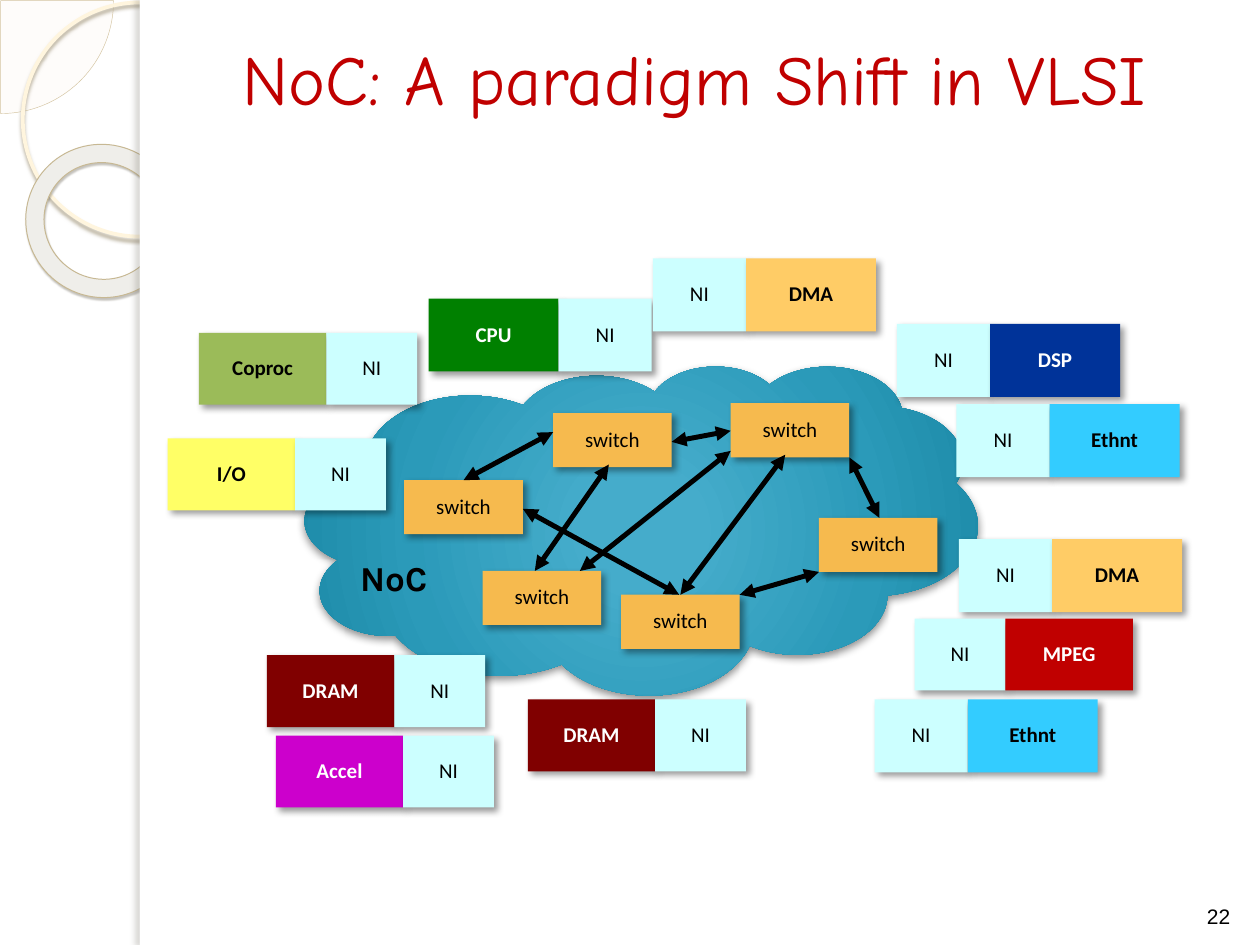
"""Build the slide on networks on chip: modules around a cloud of linked switches."""
from lxml import etree
from pptx import Presentation
from pptx.dml.color import RGBColor
from pptx.enum.shapes import MSO_CONNECTOR, MSO_SHAPE
from pptx.enum.text import MSO_ANCHOR, PP_ALIGN
from pptx.oxml.ns import qn
from pptx.util import Cm, Pt

PIE, OVAL, DONUT = MSO_SHAPE.PIE, MSO_SHAPE.OVAL, MSO_SHAPE.DONUT
BLOCK, CLOUD = MSO_SHAPE.RECTANGLE, MSO_SHAPE.CLOUD
STRAIGHT = MSO_CONNECTOR.STRAIGHT
MIDDLE, BOTTOM = MSO_ANCHOR.MIDDLE, MSO_ANCHOR.BOTTOM
CENTER = PP_ALIGN.CENTER

THEME = {
    "white": "FFFFFF", "black": "000000", "title": "C00000",
    "interface": "CCFFFF", "switch": "F6BA4E",
    "cloud": [(0, "45ACCC"), (15, "45ACCB"), (62, "2B9AB9"), (97, "1C8AA7"), (100, "0E89A7")],
    "title font": "Comic Neue", "label font": "Calibri",
    "cloud font": "Karla", "number font": "Arial",
    "title size": 40, "cloud size": 20, "label size": 12,
    "link width": 2.83,
    "block shadow": ("000000", 40, 4, 3, 45),
    "cloud shadow": ("000000", 43, 5, 2, 90),
}

TITLE = "NoC: A paradigm Shift in VLSI"
TITLE_BOX = (3.18, 0.03, 21.64, 3.05)
CLOUD_BOX = (6.15, 7.37, 13.56, 6.63)
CLOUD_LABEL, CLOUD_LABEL_BOX = "NoC", (7.01, 11.1, 2.72, 1.47)
NUMBER, NUMBER_BOX = "22", (23.93, 17.53, 1.27, 1.32)

DECORATIONS = [
    {"kind": PIE, "box": (-2.26, -2.26, 4.55, 4.55), "fill": "FEFCFA",
     "line": ("D3C39F", 0.25), "adjust": (0, 54.02)},
    {"kind": OVAL, "box": (0.46, 0.05, 4.72, 4.72), "line": ("FFF5DE", 2.15),
     "shadow": ("B0A68F", 85, 2, 2, 90)},
    {"kind": DONUT, "box": (0.51, 2.92, 3.12, 3.07), "fill": "EFEEEA",
     "line": ("C7B893", 0.58), "adjust": (0.12,), "rotation": 38.6,
     "shadow": ("5A5444", 35, 1, 1.2, 75)},
    {"kind": BLOCK, "box": (2.82, 0, 22.58, 19.05), "fill": THEME["white"]},
    {"kind": BLOCK, "box": (2.82, 0, 0.2, 19.05), "fill": THEME["white"],
     "shadow": ("736F63", 25, 3, 3, 180)},
    {"kind": BLOCK, "box": (2.82, 0, 0.5, 19.05), "fill": THEME["white"]},
]

SIZES = {"large": (2.62, 1.88, 1.47), "small": (2.57, 1.83, 1.45)}
MODULES = [
    ("Coproc", 4.01, 6.71, "small", "core first", "9BBB59", "black"),
    ("CPU", 8.64, 6.02, "large", "core first", "008000", "white"),
    ("DMA", 13.16, 5.21, "large", "core last", "FFCC66", "black"),
    ("DSP", 18.08, 6.53, "large", "core last", "003399", "white"),
    ("Ethnt", 19.28, 8.15, "large", "core last", "33CCFF", "black"),
    ("I/O", 3.38, 8.84, "small", "core first", "FFFF66", "black"),
    ("DMA", 19.33, 10.87, "large", "core last", "FFCC66", "black"),
    ("MPEG", 18.44, 12.47, "small", "core last", "C00000", "white"),
    ("Ethnt", 17.63, 14.1, "large", "core last", "33CCFF", "black"),
    ("DRAM", 5.38, 13.21, "small", "core first", "800000", "white"),
    ("DRAM", 10.64, 14.1, "small", "core first", "800000", "white"),
    ("Accel", 5.56, 14.83, "small", "core first", "CC00CC", "white"),
]

SWITCH_SIZE = (2.39, 1.09)
SWITCHES = {
    "north": (11.15, 8.33), "northeast": (14.73, 8.13), "east": (16.51, 10.44),
    "south": (12.52, 11.99), "west": (8.15, 9.68), "southwest": (9.73, 11.51),
}
LINKS = [
    ("west", (1, 0.53), "south", (0.49, 0)),
    ("south", (1, 0), "east", (0, 1)),
    ("southwest", (0.82, 0), "northeast", (0, 0.88)),
    ("northeast", (1, 1), "east", (0.51, 0)),
    ("south", (0.5, 0), "northeast", (0.46, 0.95)),
    ("west", (0.5, 0), "north", (0, 0.35)),
    ("southwest", (0.44, 0), "north", (0.47, 0.95)),
    ("north", (1, 0.53), "northeast", (0, 0.51)),
]


def lengths(values):
    return [Cm(value) for value in values]


def add_child(parent, tag, **attributes):
    child = etree.SubElement(parent, qn(tag))
    for name, value in attributes.items():
        child.set(name, str(value))
    return child


def add_shadow(shape, color, opacity, blur, distance, angle):
    effects = shape.element.spPr.find(qn("a:effectLst"))
    shadow = add_child(effects, "a:outerShdw", blurRad=Pt(blur), dist=Pt(distance),
                       dir=angle * 60000, algn="ctr", rotWithShape=0)
    add_child(add_child(shadow, "a:srgbClr", val=color), "a:alpha", val=opacity * 1000)


def add_figure(slide, kind, box, fill=None, line=None, shadow=None, adjust=(), rotation=0):
    shape = slide.shapes.add_shape(kind, *lengths(box))
    shape.rotation = rotation
    for index, value in enumerate(adjust):
        shape.adjustments[index] = value
    if fill:
        shape.fill.solid()
        shape.fill.fore_color.rgb = RGBColor.from_string(fill)
    else:
        shape.fill.background()
    if line:
        shape.line.color.rgb = RGBColor.from_string(line[0])
        shape.line.width = Pt(line[1])
    else:
        shape.line.fill.background()
    shape.shadow.inherit = False
    if shadow:
        add_shadow(shape, *shadow)
    return shape


def write(shape, text, role, color, bold=False, align=CENTER, anchor=MIDDLE, spacing=None):
    frame = shape.text_frame
    frame.vertical_anchor = anchor
    paragraph = frame.paragraphs[0]
    paragraph.alignment = align
    paragraph.line_spacing = spacing
    run = paragraph.add_run()
    run.text = text
    run.font.name = THEME[role + " font"]
    run.font.size = Pt(THEME.get(role + " size", THEME["label size"]))
    run.font.bold = bold
    run.font.color.rgb = RGBColor.from_string(THEME[color])


def add_block(slide, box, text, fill, color="black", bold=False):
    shape = add_figure(slide, BLOCK, box, fill, shadow=THEME["block shadow"])
    write(shape, text, "label", color, bold, spacing=0.93)


def add_cloud(slide):
    shape = add_figure(slide, CLOUD, CLOUD_BOX, shadow=THEME["cloud shadow"])
    properties = shape.element.spPr
    gradient = etree.Element(qn("a:gradFill"))
    stops = add_child(gradient, "a:gsLst")
    for position, color in THEME["cloud"]:
        add_child(add_child(stops, "a:gs", pos=position * 1000), "a:srgbClr", val=color)
    center = add_child(gradient, "a:path", path="circle")
    add_child(center, "a:fillToRect", l=50000, t=50000, r=50000, b=50000)
    properties.replace(properties.find(qn("a:noFill")), gradient)


def add_module(slide, name, left, top, size, order, fill, color):
    core_width, interface_width, height = SIZES[size]
    core = (core_width, name, fill, color, True)
    interface = (interface_width, "NI", THEME["interface"])
    for width, *details in (core, interface) if order == "core first" else (interface, core):
        add_block(slide, (left, top, width, height), *details)
        left += width


def switch_point(name, fractions):
    return [start + size * part
            for start, size, part in zip(SWITCHES[name], SWITCH_SIZE, fractions)]


def add_link(slide, start, start_part, end, end_part):
    points = switch_point(start, start_part) + switch_point(end, end_part)
    link = slide.shapes.add_connector(STRAIGHT, *lengths(points))
    link.line.color.rgb = RGBColor.from_string(THEME["black"])
    link.line.width = Pt(THEME["link width"])
    outline = link.element.spPr.find(qn("a:ln"))
    for tag in ("a:headEnd", "a:tailEnd"):
        add_child(outline, tag, type="triangle")
    add_child(link.element.spPr, "a:effectLst")


def main():
    presentation = Presentation()
    presentation.slide_width, presentation.slide_height = Cm(25.4), Cm(19.05)
    slide = presentation.slides.add_slide(presentation.slide_layouts[5])
    for decoration in DECORATIONS:
        add_figure(slide, **decoration)
    add_cloud(slide)
    for module in MODULES:
        add_module(slide, *module)
    for position in SWITCHES.values():
        add_block(slide, position + SWITCH_SIZE, "switch", THEME["switch"])
    for link in LINKS:
        add_link(slide, *link)
    label = slide.shapes.add_textbox(*lengths(CLOUD_LABEL_BOX))
    write(label, CLOUD_LABEL, "cloud", "black", True, None, None)
    number = slide.shapes.add_textbox(*lengths(NUMBER_BOX))
    number.text_frame.word_wrap = True
    write(number, NUMBER, "number", "black", anchor=BOTTOM)
    title = slide.shapes.title
    title.left, title.top, title.width, title.height = lengths(TITLE_BOX)
    write(title, TITLE, "title", "title")
    title.element.getparent().append(title.element)
    presentation.save("out.pptx")


if __name__ == "__main__":
    main()
